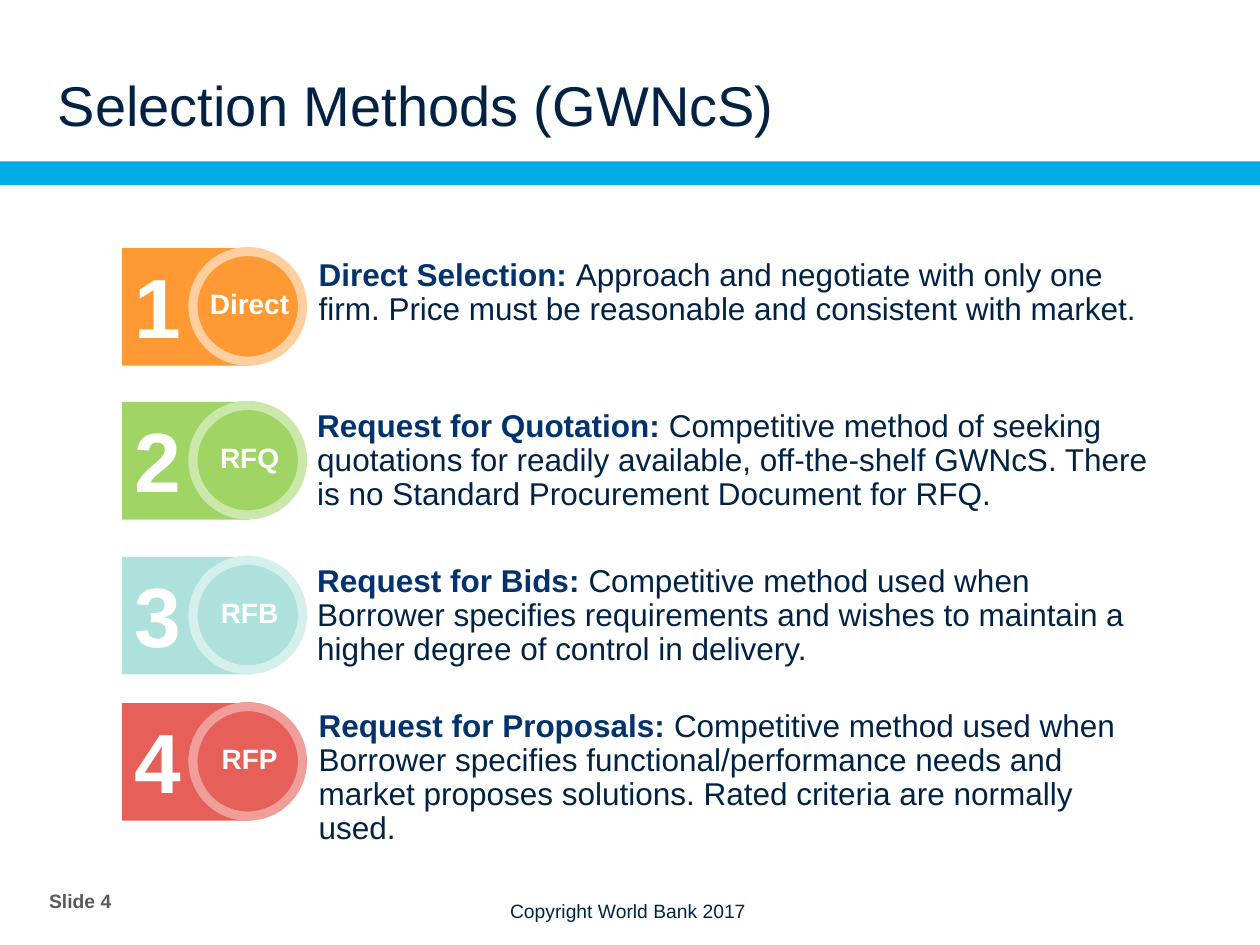
"""Build the Selection Methods slide with four numbered procurement methods."""
from dataclasses import dataclass

from pptx import Presentation
from pptx.dml.color import RGBColor
from pptx.enum.shapes import MSO_SHAPE
from pptx.enum.text import MSO_ANCHOR, PP_ALIGN
from pptx.util import Pt

RECT, OVAL = MSO_SHAPE.RECTANGLE, MSO_SHAPE.OVAL
TOP, MIDDLE, BOTTOM = MSO_ANCHOR.TOP, MSO_ANCHOR.MIDDLE, MSO_ANCHOR.BOTTOM
LEFT, CENTER = PP_ALIGN.LEFT, PP_ALIGN.CENTER

FONT = "Arial"
WHITE = RGBColor(0xFF, 0xFF, 0xFF)
NAVY = RGBColor(0x00, 0x23, 0x45)
BLUE = RGBColor(0x03, 0x33, 0x6E)
CYAN = RGBColor(0x00, 0xAD, 0xE4)
GRAY = RGBColor(0x59, 0x59, 0x59)
ORANGE = RGBColor(0xFF, 0x99, 0x33)
PALE_ORANGE = RGBColor(0xFF, 0xCF, 0x9F)
GREEN = RGBColor(0xA0, 0xD5, 0x65)
PALE_GREEN = RGBColor(0xCA, 0xE8, 0xAA)
TEAL = RGBColor(0xAE, 0xE0, 0xDC)
PALE_TEAL = RGBColor(0xD5, 0xEF, 0xED)
RED = RGBColor(0xE6, 0x5F, 0x59)
PALE_RED = RGBColor(0xF0, 0x9E, 0x9A)


@dataclass(frozen=True)
class Run:
    text: str
    size: float
    color: RGBColor
    bold: bool = False


@dataclass(frozen=True)
class Box:
    left: float
    top: float
    width: float
    height: float


@dataclass(frozen=True)
class Method:
    top: float
    label: str
    fill: RGBColor
    ring: RGBColor
    name: str
    description: str
    text_box: Box


METHODS = [
    Method(141.8, "Direct", ORANGE, PALE_ORANGE, "Direct Selection: ",
           "Approach and negotiate with only one firm. Price must be "
           "reasonable and consistent with market.",
           Box(175, 144, 494.6, 46.8)),
    Method(229.7, "RFQ", GREEN, PALE_GREEN, "Request for Quotation: ",
           "Competitive method of seeking quotations for readily available, "
           "off-the-shelf GWNcS. There is no Standard Procurement Document for RFQ.",
           Box(174.2, 230.4, 491, 66.2)),
    Method(318.2, "RFB", TEAL, PALE_TEAL, "Request for Bids: ",
           "Competitive method used when Borrower specifies requirements and "
           "wishes to maintain a higher degree of control in delivery.",
           Box(174.2, 318.9, 491, 66.2)),
    Method(401.8, "RFP", RED, PALE_RED, "Request for Proposals: ",
           "Competitive method used when Borrower specifies functional/performance "
           "needs and market proposes solutions. Rated criteria are normally used.",
           Box(175, 401.8, 491, 85.7)),
]


def write(sp, runs: list[Run], anchor=TOP, align=LEFT, spacing: float = 1.0,
          inset: bool = True, wrap: bool = True) -> None:
    """Fill a shape with one paragraph of formatted runs."""
    tf = sp.text_frame
    tf.word_wrap = wrap
    tf.vertical_anchor = anchor
    if not inset:
        tf.margin_left = tf.margin_right = tf.margin_top = tf.margin_bottom = 0
    p = tf.paragraphs[0]
    p.alignment = align
    p.line_spacing = spacing
    for run in runs:
        r = p.add_run()
        r.text = run.text
        r.font.name = FONT
        r.font.size = Pt(run.size)
        r.font.bold = run.bold
        r.font.color.rgb = run.color


def add_text(shapes, box: Box, runs: list[Run], **layout) -> None:
    """Add a text box."""
    sp = shapes.add_textbox(Pt(box.left), Pt(box.top), Pt(box.width), Pt(box.height))
    write(sp, runs, **layout)


def add_filled(shapes, kind, box: Box, fill: RGBColor):
    """Add a flat filled shape without outline."""
    sp = shapes.add_shape(kind, Pt(box.left), Pt(box.top), Pt(box.width), Pt(box.height))
    sp.shadow.inherit = False
    sp.fill.solid()
    sp.fill.fore_color.rgb = fill
    sp.line.fill.background()
    return sp


def add_method(s, number: int, m: Method) -> None:
    """Add a method's description and its numbered badge."""
    add_text(s.shapes, m.text_box,
             [Run(m.name, 18, BLUE, True), Run(m.description, 18, NAVY)],
             anchor=MIDDLE, spacing=0.9)
    badge = s.shapes.add_group_shape().shapes
    tile = add_filled(badge, RECT, Box(69.8, m.top, 72.9, 67.2), m.fill)
    write(tile, [Run(str(number), 48, WHITE, True)])
    circle = add_filled(badge, OVAL, Box(110.3, m.top + 2, 62.6, 62.6), m.fill)
    circle.line.color.rgb = m.ring
    circle.line.width = Pt(5.25)
    add_text(badge, Box(110.9, m.top + 18.4, 63.4, 26.6),
             [Run(m.label, 16, WHITE, True)], align=CENTER)


def main() -> None:
    """Create and save the slide."""
    prs = Presentation()
    prs.slide_width, prs.slide_height = Pt(720), Pt(540)
    s = prs.slides.add_slide(prs.slide_layouts[6])
    add_text(s.shapes, Box(284.4, 510.5, 153.4, 20.9),
             [Run("Copyright World Bank 2017", 11, NAVY)], wrap=False)
    add_filled(s.shapes, RECT, Box(0, 92.2, 720, 13.6), CYAN)
    add_text(s.shapes, Box(28.1, 500.4, 49.7, 28.8),
             [Run("Slide 4", 11, GRAY, True)], anchor=MIDDLE, inset=False)
    for number, method in enumerate(METHODS, 1):
        add_method(s, number, method)
    add_text(s.shapes, Box(33.1, 18.7, 666, 59.8),
             [Run("Selection Methods (GWNcS)", 32, NAVY)], anchor=BOTTOM, inset=False)
    prs.save("out.pptx")


if __name__ == "__main__":
    main()
